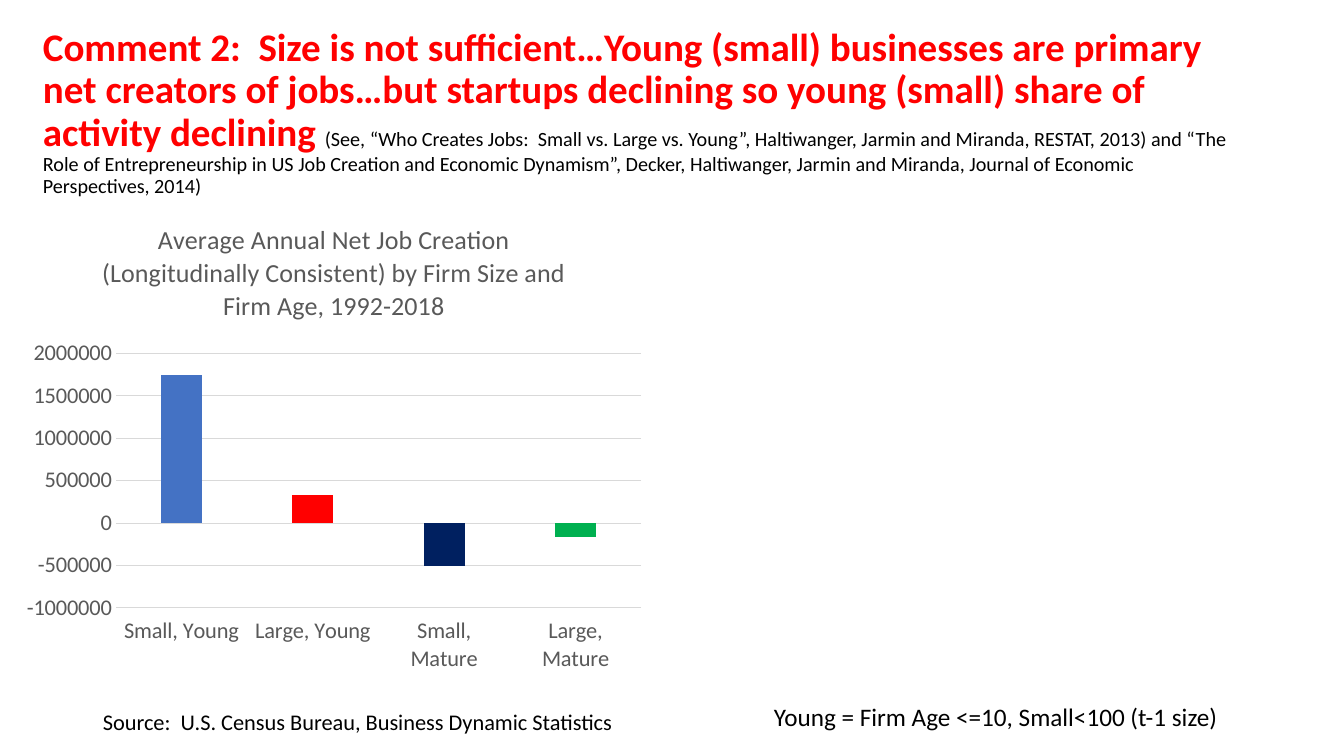
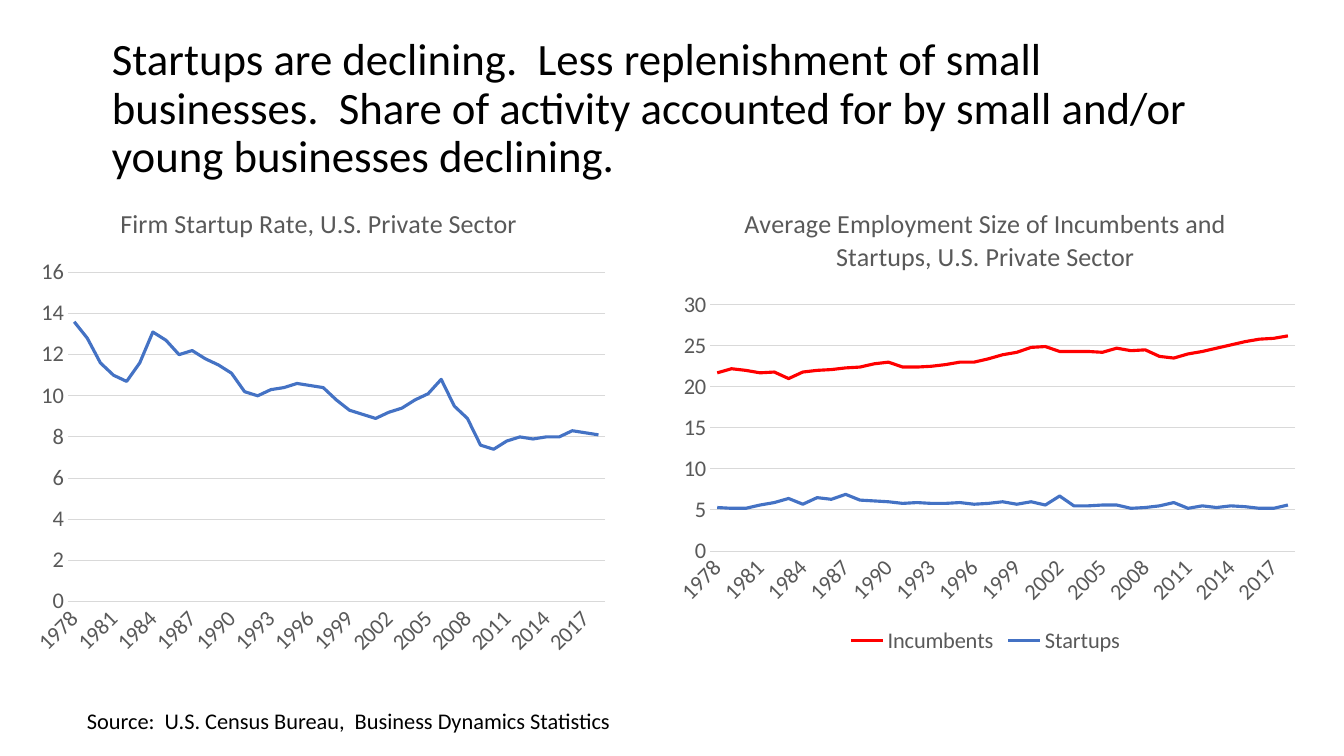
"""Builds two slides on young businesses, startups and job creation."""
import pptx
import pptx.chart.data
import pptx.dml.color
import pptx.enum.chart
import pptx.enum.text
import pptx.util

SCALE = 9071
FONT = "Calibri"
COLOURS = {
    "text": "000000",
    "accent": "FF0000",
    "chart_text": "595959",
    "grid": "D9D9D9",
    "blue": "4472C4",
    "navy": "002060",
    "green": "00B050",
}
YEARS = [str(year) for year in range(1978, 2019)]
STARTUP_RATE = [
    13.6, 12.8, 11.6, 11, 10.7, 11.6, 13.1, 12.7, 12, 12.2, 11.8, 11.5, 11.1, 10.2,
    10, 10.3, 10.4, 10.6, 10.5, 10.4, 9.8, 9.3, 9.1, 8.9, 9.2, 9.4, 9.8, 10.1,
    10.8, 9.5, 8.9, 7.6, 7.4, 7.8, 8, 7.9, 8, 8, 8.3, 8.2, 8.1,
]
INCUMBENT_SIZE = [
    21.7, 22.2, 22, 21.7, 21.8, 21, 21.8, 22, 22.1, 22.3, 22.4, 22.8, 23, 22.4,
    22.4, 22.5, 22.7, 23, 23, 23.4, 23.9, 24.2, 24.8, 24.9, 24.3, 24.3, 24.3, 24.2,
    24.7, 24.4, 24.5, 23.7, 23.5, 24, 24.3, 24.7, 25.1, 25.5, 25.8, 25.9, 26.2,
]
STARTUP_SIZE = [
    5.3, 5.2, 5.2, 5.6, 5.9, 6.4, 5.7, 6.5, 6.3, 6.9, 6.2, 6.1, 6, 5.8,
    5.9, 5.8, 5.8, 5.9, 5.7, 5.8, 6, 5.7, 6, 5.6, 6.7, 5.5, 5.5, 5.6,
    5.6, 5.2, 5.3, 5.5, 5.9, 5.2, 5.5, 5.3, 5.5, 5.4, 5.2, 5.2, 5.6,
]


def to_emu(box):
    """Turns a box in px into EMU."""
    return [length * SCALE for length in box]


def rgb(name):
    """Looks up a named colour."""
    return pptx.dml.color.RGBColor.from_string(COLOURS[name])


def style_font(font, size, colour, bold=False):
    """Sets the face, size, colour and weight of a font."""
    font.name = FONT
    font.size = pptx.util.Pt(size)
    font.bold = bold
    font.color.rgb = rgb(colour)


def add_title(page, box, spans):
    """Places a title made of (text, size, colour, bold) spans."""
    frame = page.shapes.add_textbox(*to_emu(box)).text_frame
    frame.word_wrap = True
    frame.vertical_anchor = pptx.enum.text.MSO_ANCHOR.MIDDLE
    para = frame.paragraphs[0]
    para.line_spacing = 0.9
    for text, size, colour, bold in spans:
        span = para.add_run()
        span.text = text
        style_font(span.font, size, colour, bold)


def add_note(page, box, text, size=16):
    """Places a one-line note."""
    frame = page.shapes.add_textbox(*to_emu(box)).text_frame
    frame.word_wrap = False
    frame.text = text
    style_font(frame.paragraphs[0].runs[0].font, size, "text")


def style_axes(chart, scale, number_format):
    """Styles both axes; scale holds the minimum, maximum and step."""
    for axis in (chart.category_axis, chart.value_axis):
        axis.major_tick_mark = pptx.enum.chart.XL_TICK_MARK.NONE
        axis.minor_tick_mark = pptx.enum.chart.XL_TICK_MARK.NONE
        style_font(axis.tick_labels.font, 16, "chart_text")
    values = chart.value_axis
    values.minimum_scale, values.maximum_scale, values.major_unit = scale
    values.tick_labels.number_format = number_format
    values.tick_labels.number_format_is_linked = False
    values.format.line.fill.background()
    values.has_major_gridlines = True
    for line in (chart.category_axis.format.line, values.major_gridlines.format.line):
        line.color.rgb = rgb("grid")
        line.width = pptx.util.Pt(0.75)


def add_chart(page, box, kind, title, categories, series, scale, number_format="0"):
    """Places a titled chart from (name, values) series."""
    data = pptx.chart.data.CategoryChartData()
    data.categories = categories
    for name, values in series:
        data.add_series(name, values)
    chart = page.shapes.add_chart(kind, *to_emu(box), data).chart
    style_font(chart.font, 16, "text")
    chart.has_legend = False
    chart.has_title = True
    chart.chart_title.include_in_layout = False
    frame = chart.chart_title.text_frame
    frame.text = title
    style_font(frame.paragraphs[0].runs[0].font, 18.6, "chart_text")
    style_axes(chart, scale, number_format)
    return chart


def add_column_chart(page, box, title, columns, scale):
    """Places a column chart from (category, value, colour) columns."""
    categories, values, colours = zip(*columns)
    kind = pptx.enum.chart.XL_CHART_TYPE.COLUMN_CLUSTERED
    chart = add_chart(page, box, kind, title, categories, [("Series 1", values)], scale)
    chart.category_axis.tick_label_position = pptx.enum.chart.XL_TICK_LABEL_POSITION.LOW
    plot = chart.plots[0]
    plot.vary_by_categories = False
    plot.gap_width = 219
    plot.overlap = -27
    plot.series[0].invert_if_negative = False
    for index, colour in enumerate(colours):
        fill = plot.series[0].points[index].format.fill
        fill.solid()
        fill.fore_color.rgb = rgb(colour)


def add_line_chart(page, box, title, lines, scale, number_format="0"):
    """Places a yearly line chart from (name, values, colour) lines."""
    kind = pptx.enum.chart.XL_CHART_TYPE.LINE
    series = [line[:2] for line in lines]
    chart = add_chart(page, box, kind, title, YEARS, series, scale, number_format)
    chart.plots[0].vary_by_categories = False
    labels = chart.category_axis.tick_labels.font
    labels.size = pptx.util.Pt(16)
    for body in chart.category_axis._element.xpath("c:txPr/a:bodyPr"):
        body.set("rot", "-2700000")
    for curve, (_, _, colour) in zip(chart.plots[0].series, lines):
        curve.smooth = False
        curve.marker.style = pptx.enum.chart.XL_MARKER_STYLE.NONE
        curve.format.line.color.rgb = rgb(colour)
        curve.format.line.width = pptx.util.Pt(2.25)
    if len(lines) > 1:
        chart.has_legend = True
        chart.legend.position = pptx.enum.chart.XL_LEGEND_POSITION.BOTTOM
        chart.legend.include_in_layout = False
        style_font(chart.legend.font, 16, "chart_text")


def build_job_creation(page):
    """Fills the slide on net job creation by firm size and age."""
    add_title(page, (33, 40, 1219, 146), [
        ("Comment 2:  Size is not sufficient…Young (small) businesses are primary net "
         "creators of jobs…but startups declining so young (small) share of activity "
         "declining ", 27.9, "accent", True),
        ("(See, “Who Creates Jobs:  Small vs. Large vs. Young”, Haltiwanger, Jarmin and "
         "Miranda, RESTAT, 2013) and “The Role of Entrepreneurship in US Job Creation and "
         "Economic Dynamism”, Decker, Haltiwanger, Jarmin and Miranda, Journal of Economic "
         "Perspectives, 2014)", 14.4, "text", False),
    ])
    add_column_chart(
        page, (14, 202, 640, 480),
        "Average Annual Net Job Creation (Longitudinally Consistent) by Firm Size and "
        "Firm Age, 1992-2018",
        [("Small, Young", 1740000, "blue"), ("Large, Young", 330000, "accent"),
         ("Small, Mature", -510000, "navy"), ("Large, Mature", -160000, "green")],
        (-1000000, 2000000, 500000))
    add_note(page, (93, 703, 536, 37),
             "Source:  U.S. Census Bureau, Business Dynamic Statistics")
    add_note(page, (764, 696, 470, 40), "Young = Firm Age <=10, Small<100 (t-1 size)", 18)


def build_startup_decline(page):
    """Fills the slide on the decline of startups."""
    add_title(page, (102, 33, 1150, 153), [
        ("Startups are declining.  Less replenishment of small businesses.  Share of "
         "activity accounted for by small and/or young businesses declining.",
         32, "text", False),
    ])
    add_line_chart(page, (21, 186, 596, 480), "Firm Startup Rate, U.S. Private Sector",
                   [("Series 1", STARTUP_RATE, "blue")], (0, 16, 2))
    add_line_chart(
        page, (663, 186, 645, 473),
        "Average Employment Size of Incumbents and Startups, U.S. Private Sector",
        [("Incumbents", INCUMBENT_SIZE, "accent"), ("Startups", STARTUP_SIZE, "blue")],
        (0, 30, 5), "General")
    add_note(page, (77, 702, 550, 37),
             "Source:  U.S. Census Bureau,  Business Dynamics Statistics")


def main():
    """Builds and saves the deck."""
    deck = pptx.Presentation()
    deck.slide_width, deck.slide_height = to_emu((1344, 756))
    for build in (build_job_creation, build_startup_decline):
        build(deck.slides.add_slide(deck.slide_layouts[6]))
    deck.save("out.pptx")


if __name__ == "__main__":
    main()
